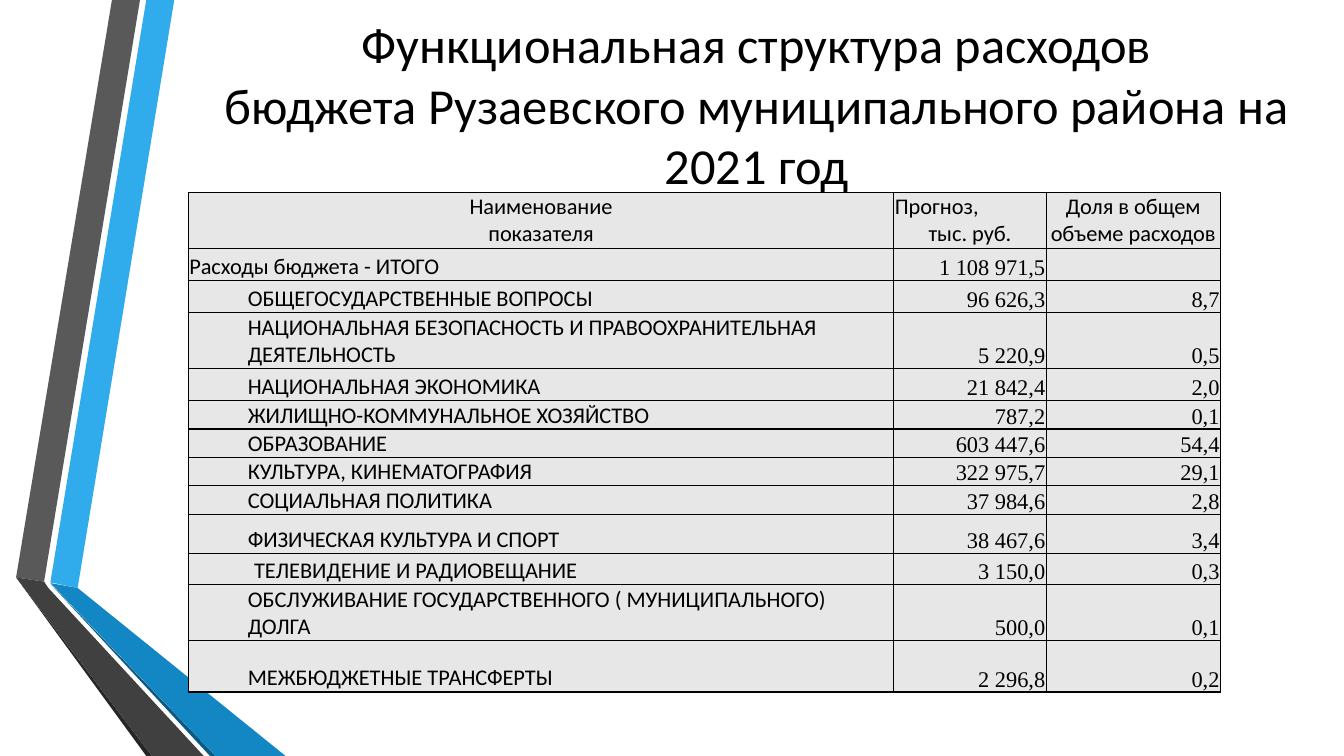
from dataclasses import dataclass

from lxml.etree import SubElement
from pptx import Presentation
from pptx.dml.color import RGBColor
from pptx.enum.text import MSO_ANCHOR, MSO_AUTO_SIZE, PP_ALIGN
from pptx.oxml.ns import qn
from pptx.util import Pt


@dataclass(frozen=True)
class Theme:
    text: str = "000000"
    border: str = "000000"
    cell: str = "E7E7E7"
    blue: str = "30ACEC"
    blue_dark: str = "1287C3"
    blue_edge: str = "0C5A82"
    grey: str = "595959"
    grey_dark: str = "404040"
    grey_edge: str = "262626"
    font: str = "Calibri"
    number_font: str = "Times New Roman"
    title_size: int = 36
    table_size: int = 16


THEME = Theme()

RIBBONS = [
    (THEME.blue, [(36, 416), (55.5, 420), (124.5, 0), (104.5, 0)]),
    (THEME.grey, [(100, 0), (80, 0), (11.5, 412.5), (31.5, 415.5)]),
    (THEME.grey_edge, [(11.5, 412.5), (104.5, 540), (108.5, 540)]),
    (THEME.blue_edge, [(36, 417), (150, 540), (154, 540)]),
    (THEME.blue_dark, [(36, 416.5), (154, 540), (204, 540), (55.5, 420)]),
    (THEME.grey_dark, [(145.5, 540), (34.5, 420), (31.5, 415.5),
                       (11.5, 412.5), (108.5, 540)]),
]

TITLE = ("Функциональная структура расходов\v"
         "бюджета Рузаевского муниципального района на 2021 год")

COLUMN_WIDTHS = [504, 108.75, 124.5]
HEADER_HEIGHT = 40
HEADERS = ["Наименование\vпоказателя", "Прогноз,\nтыс. руб.",
           "Доля в общем объеме расходов"]
TOTAL_INDENT, ITEM_INDENT, TV_INDENT = 0, 36, 40.5

# Row height, name indent, name, forecast, share
EXPENSES = [
    (23, TOTAL_INDENT, "Расходы бюджета - ИТОГО", "1 108 971,5", ""),
    (23, ITEM_INDENT, "ОБЩЕГОСУДАРСТВЕННЫЕ ВОПРОСЫ", "96 626,3", "8,7"),
    (40, ITEM_INDENT,
     "НАЦИОНАЛЬНАЯ БЕЗОПАСНОСТЬ И ПРАВООХРАНИТЕЛЬНАЯ ДЕЯТЕЛЬНОСТЬ",
     "5 220,9", "0,5"),
    (23, ITEM_INDENT, "НАЦИОНАЛЬНАЯ ЭКОНОМИКА", "21 842,4", "2,0"),
    (20, ITEM_INDENT, "ЖИЛИЩНО-КОММУНАЛЬНОЕ ХОЗЯЙСТВО", "787,2", "0,1"),
    (20, ITEM_INDENT, "ОБРАЗОВАНИЕ", "603 447,6", "54,4"),
    (20, ITEM_INDENT, "КУЛЬТУРА, КИНЕМАТОГРАФИЯ", "322 975,7", "29,1"),
    (20, ITEM_INDENT, "СОЦИАЛЬНАЯ ПОЛИТИКА", "37 984,6", "2,8"),
    (28, ITEM_INDENT, "ФИЗИЧЕСКАЯ КУЛЬТУРА И СПОРТ", "38 467,6", "3,4"),
    (22.5, TV_INDENT, "ТЕЛЕВИДЕНИЕ И РАДИОВЕЩАНИЕ", "3 150,0", "0,3"),
    (40, ITEM_INDENT,
     "ОБСЛУЖИВАНИЕ ГОСУДАРСТВЕННОГО ( МУНИЦИПАЛЬНОГО) ДОЛГА",
     "500,0", "0,1"),
    (36.5, ITEM_INDENT, "МЕЖБЮДЖЕТНЫЕ ТРАНСФЕРТЫ", "2 296,8", "0,2"),
]


def rgb(color):
    return RGBColor.from_string(color)


def style_paragraph(p, size, align, font=THEME.font):
    p.alignment = align
    p.font.name = font
    p.font.size = Pt(size)
    p.font.color.rgb = rgb(THEME.text)


def add_ribbon(s, color, points):
    points = [(Pt(x), Pt(y)) for x, y in points]
    builder = s.shapes.build_freeform(*points[0])
    builder.add_line_segments(points[1:], close=True)
    sp = builder.convert_to_shape()
    sp.fill.solid()
    sp.fill.fore_color.rgb = rgb(color)
    sp.line.fill.background()
    sp.shadow.inherit = False


def add_title(s):
    sp = s.shapes.title
    sp.left, sp.top, sp.width, sp.height = Pt(129.5), Pt(12), Pt(822), Pt(124.5)
    tf = sp.text_frame
    tf.text = TITLE
    tf.word_wrap = True
    tf.auto_size = MSO_AUTO_SIZE.NONE
    tf.vertical_anchor = MSO_ANCHOR.MIDDLE
    style_paragraph(tf.paragraphs[0], THEME.title_size, PP_ALIGN.CENTER)


def add_borders(cell):
    """Line all four sides; the lines must precede the fill in tcPr."""
    tc_pr = cell._tc.get_or_add_tcPr()
    for i, side in enumerate(("a:lnL", "a:lnR", "a:lnT", "a:lnB")):
        ln = SubElement(tc_pr, qn(side), w=str(Pt(1)))
        fill = SubElement(ln, qn("a:solidFill"))
        SubElement(fill, qn("a:srgbClr"), val=THEME.border)
        tc_pr.insert(i, ln)


def fill_cell(cell, text, align, anchor, font=THEME.font, indent=0):
    cell.text = text
    cell.vertical_anchor = anchor
    cell.margin_left = Pt(6.5 if indent else 0.7)
    cell.margin_right = cell.margin_top = Pt(0.7)
    cell.margin_bottom = 0
    cell.fill.solid()
    cell.fill.fore_color.rgb = rgb(THEME.cell)
    add_borders(cell)
    for p in cell.text_frame.paragraphs:
        style_paragraph(p, THEME.table_size, align, font)
        if indent:
            p._p.get_or_add_pPr().set("marL", str(Pt(indent)))


def add_expense_table(s):
    heights = [HEADER_HEIGHT] + [row[0] for row in EXPENSES]
    frame = s.shapes.add_table(len(heights), len(COLUMN_WIDTHS), Pt(134.5),
                               Pt(137.25), Pt(sum(COLUMN_WIDTHS)),
                               Pt(sum(heights)))
    table = frame.table
    for column, width in zip(table.columns, COLUMN_WIDTHS):
        column.width = Pt(width)
    for row, height in zip(table.rows, heights):
        row.height = Pt(height)

    for c, header in enumerate(HEADERS):
        fill_cell(table.cell(0, c), header, PP_ALIGN.CENTER, MSO_ANCHOR.MIDDLE)
    forecast = table.cell(0, 1).text_frame
    forecast.paragraphs[0].alignment = PP_ALIGN.LEFT

    for r, (_, indent, name, *numbers) in enumerate(EXPENSES, start=1):
        fill_cell(table.cell(r, 0), name, PP_ALIGN.LEFT, MSO_ANCHOR.BOTTOM,
                  indent=indent)
        for c, number in enumerate(numbers, start=1):
            fill_cell(table.cell(r, c), number, PP_ALIGN.RIGHT,
                      MSO_ANCHOR.BOTTOM, THEME.number_font)


def main():
    prs = Presentation()
    prs.slide_width, prs.slide_height = Pt(960), Pt(540)
    s = prs.slides.add_slide(prs.slide_layouts[5])
    for color, points in RIBBONS:
        add_ribbon(s, color, points)
    add_title(s)
    add_expense_table(s)
    prs.save("out.pptx")


if __name__ == "__main__":
    main()
